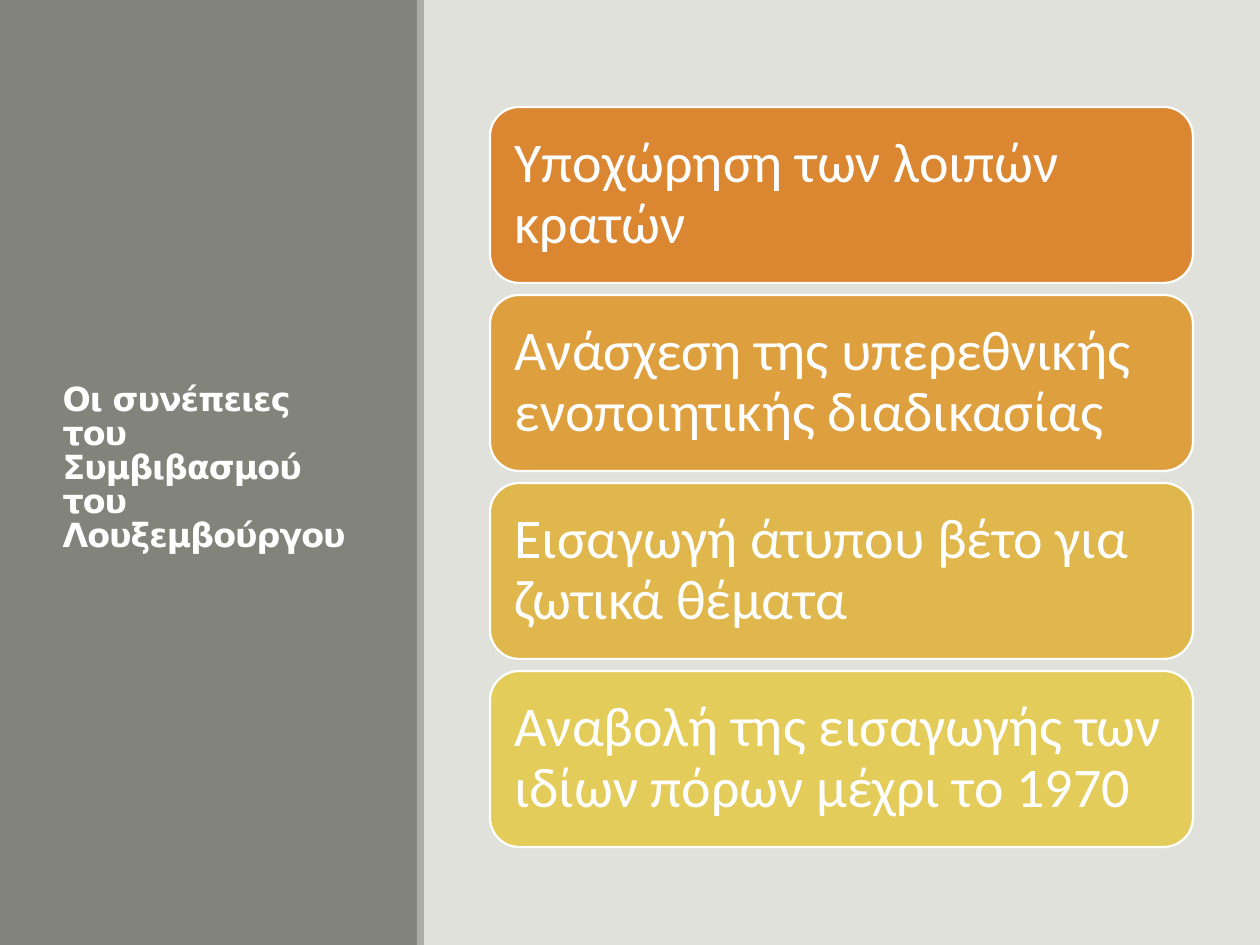
from pptx import Presentation
from pptx import util as u
from pptx.dml.color import RGBColor
from pptx.enum import shapes, text

PX = 914400 / 126  # EMU in one px
COLOURS = {
    "background": "E1E1DB",
    "panel": "82847C",
    "divider": "ACADA8",
    "white": "FFFFFF",
}
TITLE = "Οι συνέπειες του Συμβιβασμού του Λουξεμβούργου"
CONSEQUENCES = [
    ("Υποχώρηση των λοιπών κρατών", "DB8631"),
    ("Ανάσχεση της υπερεθνικής ενοποιητικής διαδικασίας", "DEA03F"),
    ("Εισαγωγή άτυπου βέτο για ζωτικά θέματα", "E0B74C"),
    ("Αναβολή της εισαγωγής των ιδίων πόρων μέχρι το 1970", "E3CC5A"),
]
CARD_LEFT, CARD_TOP, CARD_WIDTH, CARD_HEIGHT, CARD_PITCH = 490, 107, 703, 176, 188
TITLE_FONT = {"name": "DejaVu Sans", "size": u.Pt(19), "bold": True}
CARD_FONT = {"name": "Calibri", "size": u.Pt(32), "bold": False}


def px(length):
    return u.Emu(round(length * PX))


def set_all(target, values):
    for name, value in values.items():
        setattr(target, name, value)


def paint(fill, colour):
    fill.solid()
    fill.fore_color.rgb = RGBColor.from_string(colour)


def add_block(page, kind, place, colour):
    block = page.shapes.add_shape(kind, *map(px, place))
    block.shadow.inherit = False
    paint(block.fill, colour)
    block.line.fill.background()
    return block


def write(box, words, font, spacing, margins):
    frame = box.text_frame
    set_all(frame, {"word_wrap": True, "auto_size": text.MSO_AUTO_SIZE.NONE,
                    "vertical_anchor": text.MSO_ANCHOR.MIDDLE, **margins})
    para = frame.paragraphs[0]
    set_all(para, {"alignment": text.PP_ALIGN.LEFT, "line_spacing": spacing})
    span = para.add_run()
    span.text = words
    set_all(span.font, font)
    span.font.color.rgb = RGBColor.from_string(COLOURS["white"])
    return span


def add_title(page):
    title = page.shapes.title
    place = (50, 72, 319, 795)
    set_all(title, dict(zip(("left", "top", "width", "height"), map(px, place))))
    span = write(title, TITLE, TITLE_FONT, 0.85, {})
    span.font._element.set("spc", "-50")  # letter spacing, 1/100 pt
    return title


def add_card(page, row, words, colour):
    place = (CARD_LEFT, CARD_TOP + row * CARD_PITCH, CARD_WIDTH, CARD_HEIGHT)
    card = add_block(page, shapes.MSO_SHAPE.ROUNDED_RECTANGLE, place, colour)
    paint(card.line.fill, COLOURS["white"])
    card.line.width = u.Pt(1.25)
    sides = ("left", "top", "right", "bottom")
    write(card, words, CARD_FONT, 0.9, {f"margin_{side}": px(16) for side in sides})


def main():
    deck = Presentation()
    deck.slide_width, deck.slide_height = px(1260), px(945)
    page = deck.slides.add_slide(deck.slide_layouts[5])
    paint(page.background.fill, COLOURS["background"])

    # Side panel, behind the title
    rectangle = shapes.MSO_SHAPE.RECTANGLE
    panel = add_block(page, rectangle, (0, 0, 418, 945), COLOURS["panel"])
    title = add_title(page)
    title.element.addprevious(panel.element)
    add_block(page, rectangle, (417, 0, 7, 945), COLOURS["divider"])

    # Stack of consequences
    for row, (words, colour) in enumerate(CONSEQUENCES):
        add_card(page, row, words, colour)

    deck.save("out.pptx")


if __name__ == "__main__":
    main()
